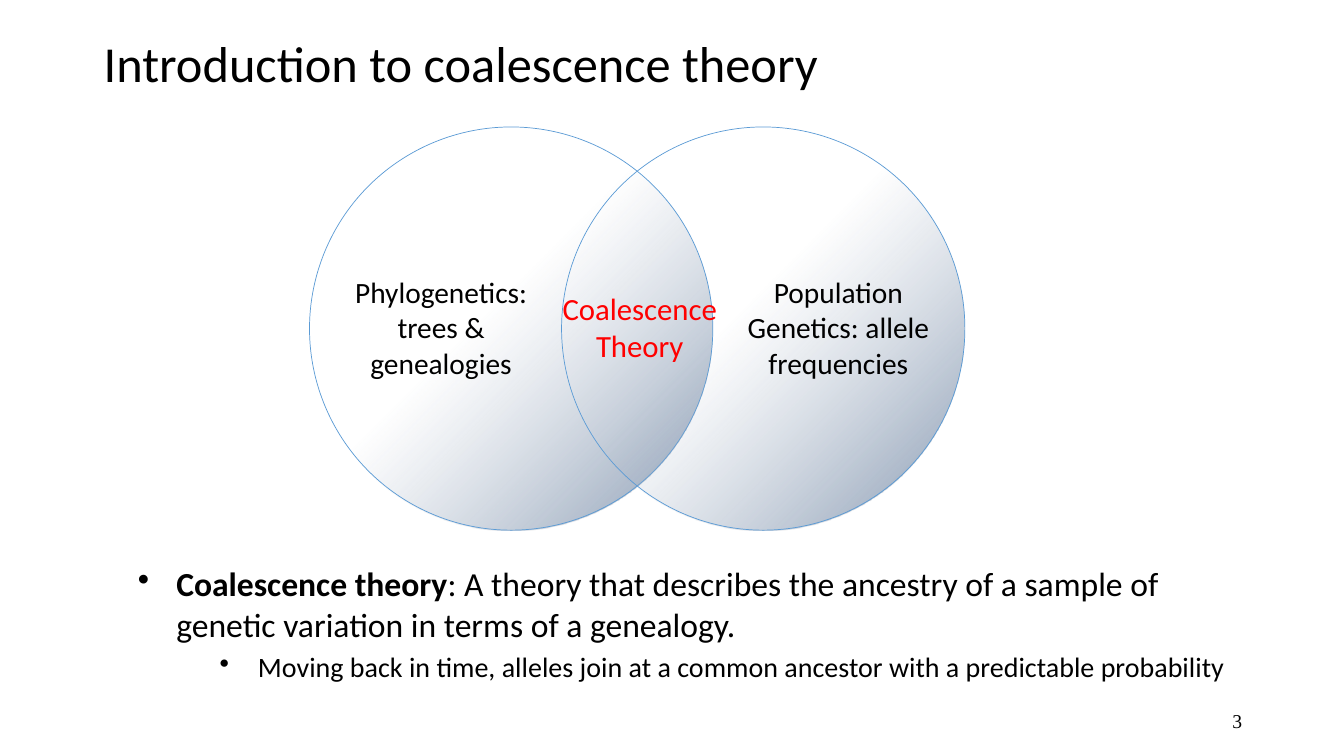
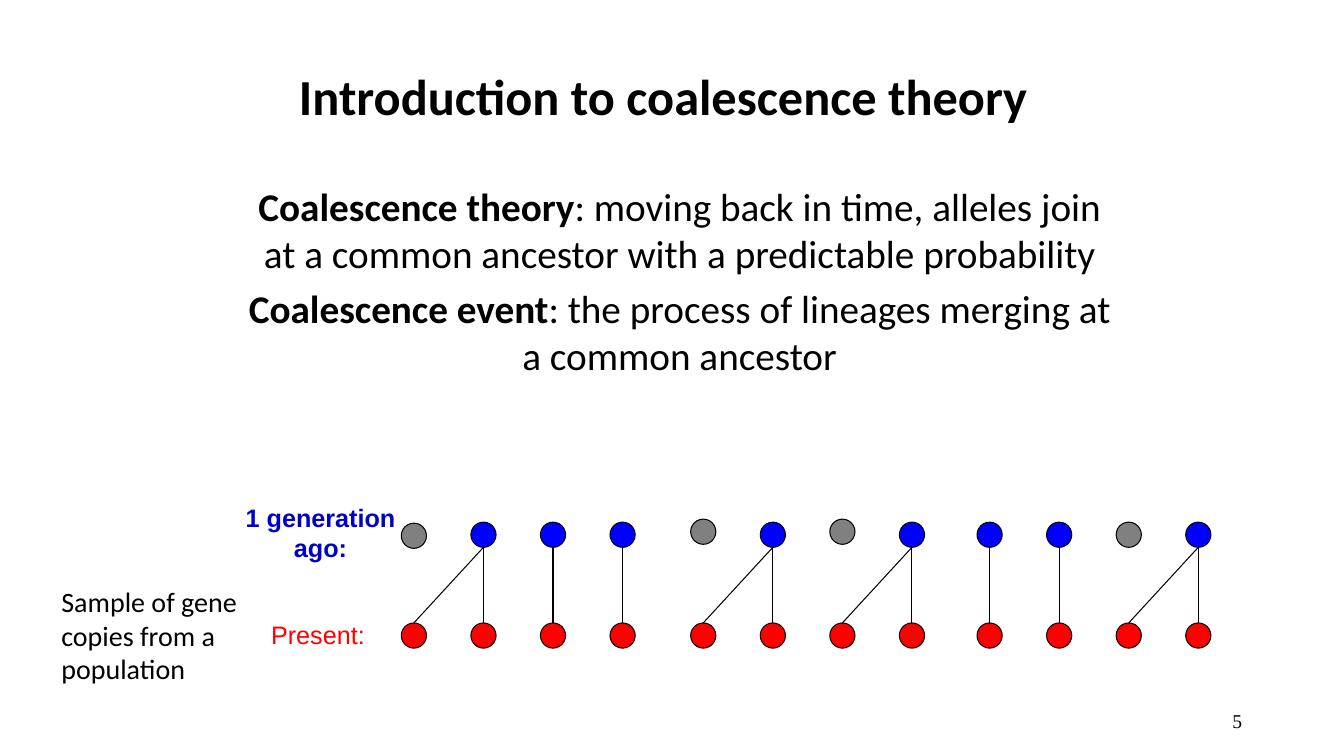
from pptx import Presentation
from pptx.dml.color import RGBColor
from pptx.enum.shapes import MSO_CONNECTOR, MSO_SHAPE
from pptx.enum.text import MSO_ANCHOR, PP_ALIGN
from pptx.oxml import parse_xml
from pptx.oxml.ns import nsdecls
from pptx.oxml.xmlchemy import OxmlElement
from pptx.util import Inches, Pt

BLACK = RGBColor(0x00, 0x00, 0x00)
RED = RGBColor(0xFF, 0x00, 0x00)
BLUE = RGBColor(0x00, 0x00, 0xFF)
NAVY = RGBColor(0x00, 0x00, 0xCC)
GREY = RGBColor(0x80, 0x80, 0x80)
SKY = RGBColor(0x5B, 0x9B, 0xD5)

LEFT, MID, RIGHT = PP_ALIGN.LEFT, PP_ALIGN.CENTER, PP_ALIGN.RIGHT
TITLE = "Introduction to coalescence theory"
DOT = 0.25
STEP = 0.69
STARTS = (3.98, 6.85, 9.69)
PER_SET = 4
OLD_TOP, NEW_TOP = 5.18, 6.18
LOST = {0: 5.19, 4: 5.15, 6: 5.15, 10: 5.18}

FADE = (
    f'<a:gradFill {nsdecls("a")} rotWithShape="1"><a:gsLst>'
    '<a:gs pos="0"><a:srgbClr val="8497B0"/></a:gs>'
    '<a:gs pos="55000"><a:srgbClr val="ADB9CA"><a:alpha val="0"/></a:srgbClr></a:gs>'
    '</a:gsLst><a:path path="circle">'
    '<a:fillToRect l="100000" t="100000"/></a:path></a:gradFill>'
)


def put(item, values):
    for key, value in values.items():
        setattr(item, key, value)


def add_text(slide, box, paras, size, color=BLACK, font="Calibri", bold=False,
             align=LEFT, wrap=True, anchor=MSO_ANCHOR.TOP, **form):
    frame = slide.shapes.add_textbox(*map(Inches, box)).text_frame
    put(frame, {"word_wrap": wrap, "vertical_anchor": anchor})
    for row, runs in enumerate(paras):
        para = frame.add_paragraph() if row else frame.paragraphs[0]
        put(para, {"alignment": align, **form})
        for text, strong in [(runs, bold)] if isinstance(runs, str) else runs:
            run = para.add_run()
            run.text = text
            put(run.font, {"name": font, "size": Pt(size), "bold": strong})
            run.font.color.rgb = color
    return frame


def add_title(slide, box, **form):
    add_text(slide, box, [TITLE], 36, anchor=MSO_ANCHOR.BOTTOM,
             line_spacing=0.9, **form)


def add_page(slide, number):
    add_text(slide, (9.42, 6.95, 3, 0.4), [number], 14, font="Times New Roman",
             align=RIGHT, anchor=MSO_ANCHOR.MIDDLE)


def add_bullet(para, indent):
    props = para._p.get_or_add_pPr()
    props.set("marL", str(Inches(indent)))
    props.set("indent", str(Inches(-0.38)))
    mark = OxmlElement("a:buChar")
    mark.set("char", "•")
    props.append(mark)


def add_round(slide, left, top, size, edge, width):
    shape = slide.shapes.add_shape(
        MSO_SHAPE.OVAL, *map(Inches, (left, top, size, size)))
    shape.shadow.inherit = False
    shape.line.color.rgb = edge
    shape.line.width = Pt(width)
    return shape


def add_ring(slide, left):
    ring = add_round(slide, left, 1.26, 4, SKY, 0.5)
    ring.fill.background()
    blank = ring.element.spPr.find("{*}noFill")
    blank.getparent().replace(blank, parse_xml(FADE))


def add_dot(slide, left, top, color):
    dot = add_round(slide, left, top, DOT, BLACK, 0.75)
    dot.fill.solid()
    dot.fill.fore_color.rgb = color
    return dot


def add_link(slide, old, new):
    start = old.left + old.width // 2, old.top + old.height
    link = slide.shapes.add_connector(MSO_CONNECTOR.STRAIGHT, *start, new.left, new.top)
    link.end_connect(new, 0)
    link.line.color.rgb = BLACK
    link.line.width = Pt(0.75)
    link.element.spPr.append(OxmlElement("a:effectLst"))


def add_venn(slide):
    for left in (3.07, 5.57):
        add_ring(slide, left)
    add_text(slide, (3.29, 2.67, 2.17, 1.16),
             ["Phylogenetics: trees & genealogies"], 21, align=MID)
    add_text(slide, (7.22, 2.67, 2.19, 1.16),
             ["Population", "Genetics: allele frequencies"], 21, align=MID)
    add_text(slide, (5.47, 2.83, 1.75, 0.84), ["Coalescence", "Theory"], 22,
             RED, align=MID, wrap=False)


def add_tree(slide):
    lefts = [start + STEP * i for start in STARTS for i in range(PER_SET)]
    young = [add_dot(slide, left, NEW_TOP, RED) for left in lefts]
    old = [add_dot(slide, left, LOST.get(i, OLD_TOP), GREY if i in LOST else BLUE)
           for i, left in enumerate(lefts)]
    for i, child in enumerate(young):
        add_link(slide, old[i + 1 if i in LOST else i], child)


def build_venn(slide):
    add_title(slide, (0.93, 0.15, 11, 0.83))
    frame = add_text(slide, (1.27, 5.54, 11.15, 1.67), [
        [("Coalescence theory", True),
         (": A theory that describes the ancestry of a sample of "
          "genetic variation in terms of a genealogy.", False)],
    ], 24, space_before=Pt(4.8))
    point = frame.add_paragraph()
    put(point, {"level": 1, "space_before": Pt(4)})
    run = point.add_run()
    run.text = ("Moving back in time, alleles join at a common ancestor "
                "with a predictable probability")
    put(run.font, {"name": "Calibri", "size": Pt(20)})
    run.font.color.rgb = BLACK
    for para, indent in zip(frame.paragraphs, (0.38, 1.19)):
        add_bullet(para, indent)
    add_page(slide, "3")
    add_venn(slide)


def build_tree(slide):
    add_title(slide, (2.33, 0.5, 8.5, 0.8), bold=True, align=MID)
    add_text(slide, (2.35, 1.76, 8.78, 1.67), [
        [("Coalescence theory", True),
         (": moving back in time, alleles join at a common ancestor "
          "with a predictable probability", False)],
        [("Coalescence event", True),
         (": the process of lineages merging at a common ancestor", False)],
    ], 28, align=MID, space_before=Pt(5.6))
    add_page(slide, "5")
    add_text(slide, (2.59, 6.09, 1.13, 0.4), ["Present:"], 18, RED, "Arial",
             wrap=False)
    add_text(slide, (0.51, 5.75, 1.95, 1.11),
             ["Sample of gene copies from a population"], 20)
    add_text(slide, (2.3, 4.93, 1.76, 0.7), ["1 generation", "ago:"], 18, NAVY,
             "Arial", True, MID, wrap=False)
    add_tree(slide)


def main():
    deck = Presentation()
    put(deck, {"slide_width": Inches(13.33), "slide_height": Inches(7.5)})
    for build in (build_venn, build_tree):
        build(deck.slides.add_slide(deck.slide_layouts[6]))
    deck.save("out.pptx")


if __name__ == "__main__":
    main()
